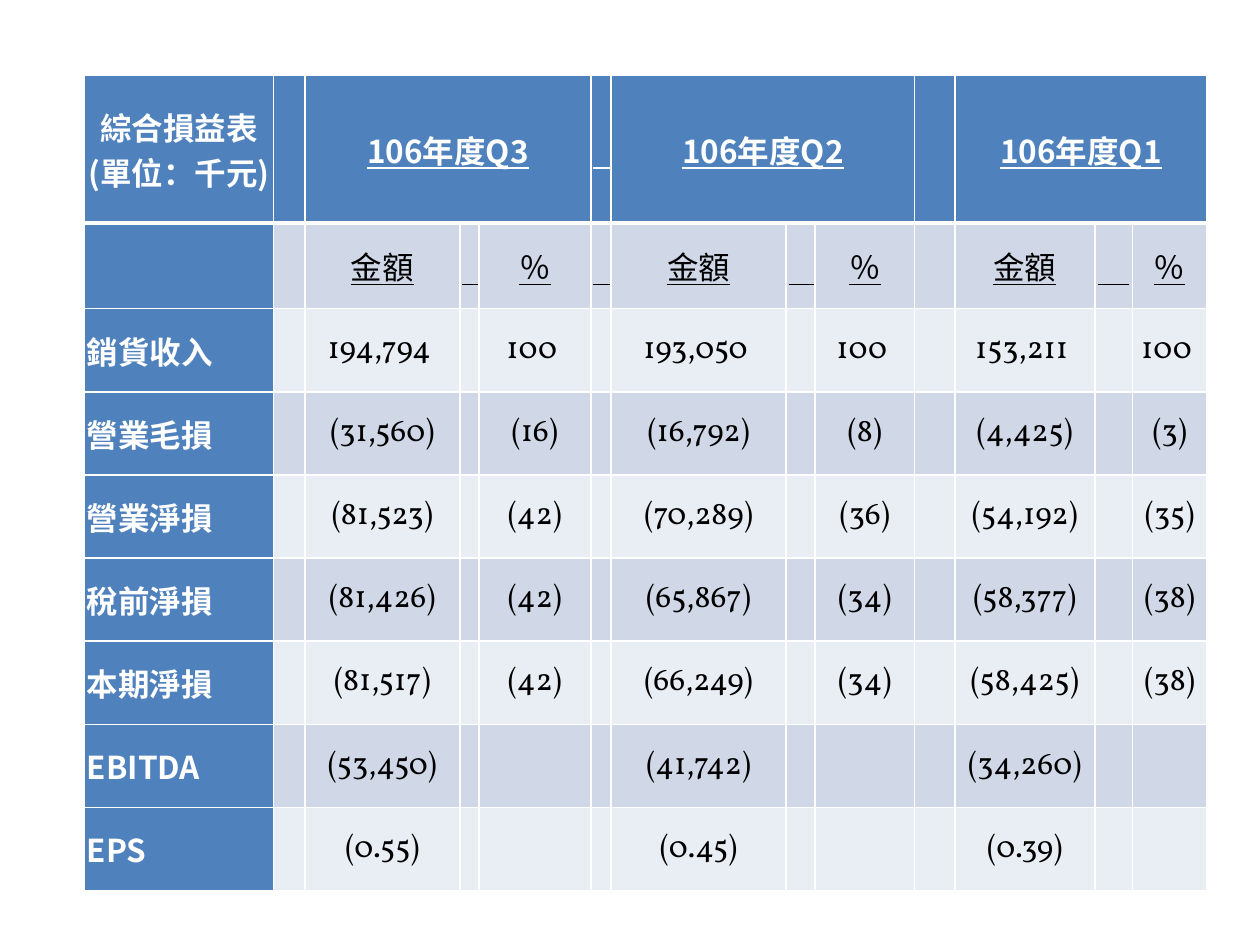
"""Builds a slide with a quarterly table of comprehensive income."""
import dataclasses
import typing

import pptx
import pptx.dml.color
import pptx.enum.text
import pptx.oxml.ns
import pptx.table
import pptx.util
from lxml import etree

COLORS = {"header": "4F81BD", "dark_band": "D0D8E8", "light_band": "E9EDF4",
          "white": "FFFFFF", "black": "000000"}
SANS, SERIF = "Noto Sans CJK SC", "Vollkorn"
GRID_COLUMNS, GRID_ROWS = 1000, 750
UNIT = pptx.util.Inches(10) // GRID_COLUMNS
TABLE_LEFT, TABLE_TOP = 67, 60
COLUMN_SPANS = [150, 25, 123, 15, 89, 16, 139, 23, 79, 32, 111, 30, 59]
ROW_SPANS = [117, 68] + [66] * 7
AMOUNT_COLUMNS = [2, 6, 10]
UNDERLINED_GAPS = [(0, 5), (1, 3), (1, 5), (1, 7), (1, 11)]
GAP = "　"
CELL_FORMAT = {"margin_left": pptx.util.Inches(0.02), "margin_right": pptx.util.Inches(0.02),
               "margin_top": 0, "margin_bottom": 0,
               "vertical_anchor": pptx.enum.text.MSO_ANCHOR.MIDDLE}
CENTER = pptx.enum.text.PP_ALIGN.CENTER
JUSTIFY = pptx.enum.text.PP_ALIGN.JUSTIFY


@dataclasses.dataclass(frozen=True)
class TextStyle:
    font: str
    color: str
    bold: bool = False
    underline: bool = False
    alignment: typing.Any = CENTER


@dataclasses.dataclass(frozen=True)
class StatementRow:
    label: str
    amounts: tuple[str, ...]
    percentages: tuple[str, ...] = ("", "", "")


TITLE = TextStyle(SANS, "white", bold=True)
QUARTER = TextStyle(SANS, "white", bold=True, underline=True)
LABEL = TextStyle(SANS, "white", bold=True, alignment=JUSTIFY)
HEADING = TextStyle(SERIF, "black", underline=True)
VALUE = TextStyle(SERIF, "black")

QUARTERS = ["106年度Q3", "106年度Q2", "106年度Q1"]
STATEMENT = [
    StatementRow("銷貨收入", ("194,794 ", "193,050 ", "153,211 "), ("100 ", "100 ", "100 ")),
    StatementRow("營業毛損", ("(31,560)", "(16,792)", "(4,425)"), ("(16)", "(8)", "(3)")),
    StatementRow("營業淨損", ("(81,523)", "(70,289)", "(54,192)"), ("(42)", "(36)", "(35)")),
    StatementRow("稅前淨損", ("(81,426)", "(65,867)", "(58,377)"), ("(42)", "(34)", "(38)")),
    StatementRow("本期淨損", ("(81,517)", "(66,249)", "(58,425)"), ("(42)", "(34)", "(38)")),
    StatementRow("EBITDA", ("(53,450)", "(41,742)", "(34,260)")),
    StatementRow("EPS", ("(0.55)", "(0.45)", "(0.39)")),
]


def rgb(name: str) -> pptx.dml.color.RGBColor:
    return pptx.dml.color.RGBColor.from_string(COLORS[name])


def add_element(parent: typing.Any, tag: str, **attributes: str) -> typing.Any:
    return etree.SubElement(parent, pptx.oxml.ns.qn(tag), **attributes)


def draw_borders(cell: pptx.table._Cell, row: int) -> None:
    properties = cell._tc.get_or_add_tcPr()
    widths = {"a:lnL": 1, "a:lnR": 1, "a:lnT": 3 if row == 1 else 1,
              "a:lnB": 3 if row == 0 else 1}
    for tag, width in widths.items():
        line = add_element(properties, tag, w=str(pptx.util.Pt(width)))
        add_element(add_element(line, "a:solidFill"), "a:srgbClr", val=COLORS["white"])


def format_cell(cell: pptx.table._Cell, row: int, column: int) -> None:
    for name, value in CELL_FORMAT.items():
        setattr(cell, name, value)
    draw_borders(cell, row)
    band = "dark_band" if row % 2 else "light_band"
    cell.fill.solid()
    cell.fill.fore_color.rgb = rgb("header" if row == 0 or column == 0 else band)


def write(cell: pptx.table._Cell, text: str, style: TextStyle) -> None:
    if not text:
        return
    paragraph = cell.text_frame.paragraphs[0]
    paragraph.alignment = style.alignment
    run = paragraph.add_run()
    run.text = text
    font_format = {"name": style.font, "size": pptx.util.Pt(18),
                   "bold": style.bold, "underline": style.underline}
    for name, value in font_format.items():
        setattr(run.font, name, value)
    run.font.color.rgb = rgb(style.color)
    add_element(run._r.get_or_add_rPr(), "a:ea", typeface=SANS)


def add_grid(slide: typing.Any) -> pptx.table.Table:
    table = slide.shapes.add_table(
        len(ROW_SPANS), len(COLUMN_SPANS), TABLE_LEFT * UNIT, TABLE_TOP * UNIT,
        sum(COLUMN_SPANS) * UNIT, sum(ROW_SPANS) * UNIT).table
    for column, span in zip(table.columns, COLUMN_SPANS):
        column.width = span * UNIT
    for row, span in zip(table.rows, ROW_SPANS):
        row.height = span * UNIT
    for row in range(len(ROW_SPANS)):
        for column in range(len(COLUMN_SPANS)):
            format_cell(table.cell(row, column), row, column)
    return table


def fill_headings(table: pptx.table.Table) -> None:
    write(table.cell(0, 0), "綜合損益表(單位：千元)", TITLE)
    for column, quarter in zip(AMOUNT_COLUMNS, QUARTERS):
        table.cell(0, column).merge(table.cell(0, column + 2))
        write(table.cell(0, column), quarter, QUARTER)
        write(table.cell(1, column), "金額", HEADING)
        write(table.cell(1, column + 2), "％", HEADING)
    for row, column in UNDERLINED_GAPS:
        write(table.cell(row, column), GAP, HEADING if row else QUARTER)


def fill_statement(table: pptx.table.Table) -> None:
    for row, entry in enumerate(STATEMENT, start=2):
        write(table.cell(row, 0), entry.label, LABEL)
        for column, amount, percentage in zip(AMOUNT_COLUMNS, entry.amounts, entry.percentages):
            write(table.cell(row, column), amount, VALUE)
            write(table.cell(row, column + 2), percentage, VALUE)


def main() -> None:
    presentation = pptx.Presentation()
    presentation.slide_width = GRID_COLUMNS * UNIT
    presentation.slide_height = GRID_ROWS * UNIT
    slide = presentation.slides.add_slide(presentation.slide_layouts[6])
    table = add_grid(slide)
    fill_headings(table)
    fill_statement(table)
    presentation.save("out.pptx")


if __name__ == "__main__":
    main()
